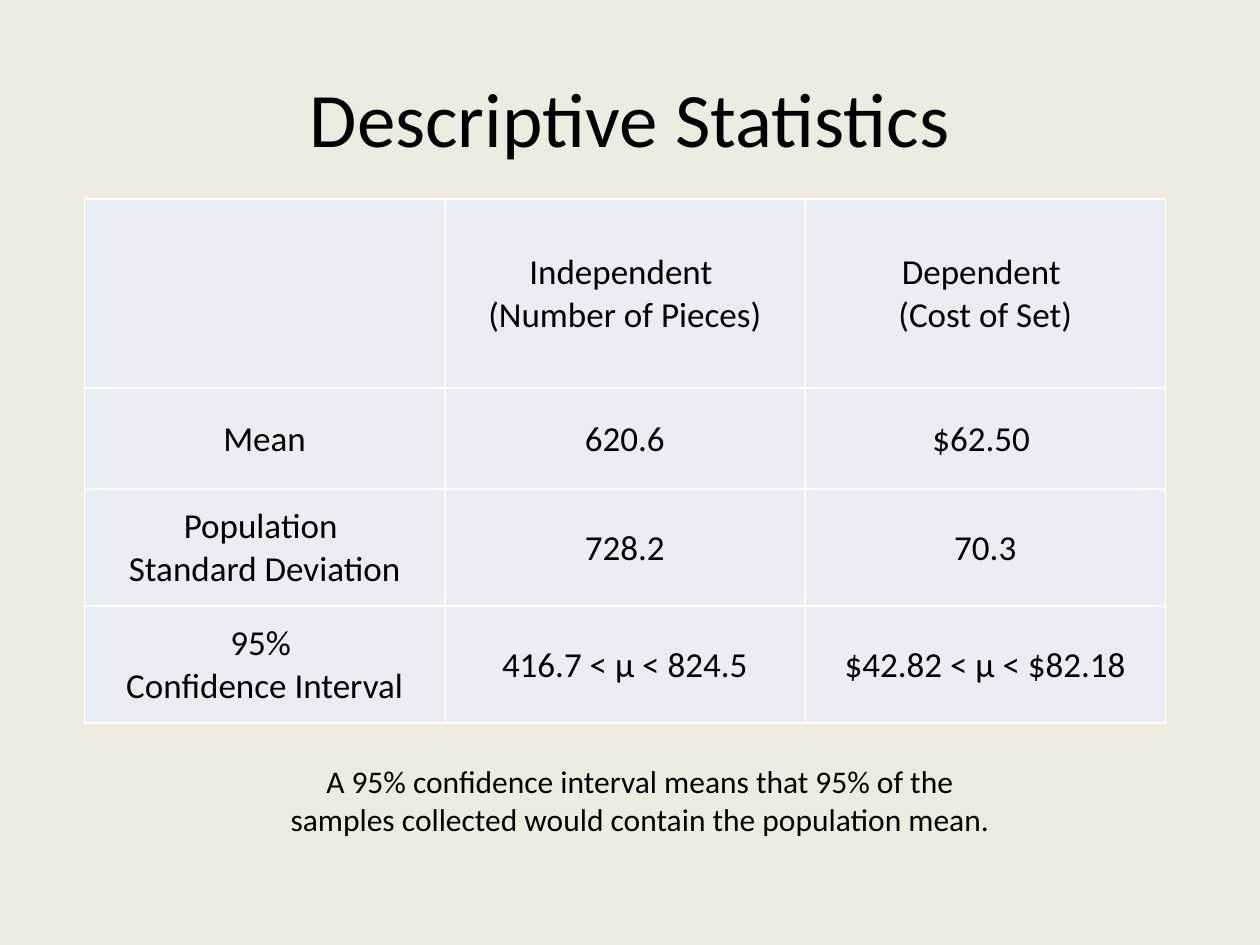
from lxml import etree
from pptx import Presentation
from pptx import util as u
from pptx.dml.color import RGBColor
from pptx.enum import text as t
from pptx.oxml import ns

COLORS = {"background": "EEECE1", "cell": "E9EDF4", "border": "FFFFFF", "text": "000000"}
FONT = "Calibri"
STATISTICS = [
    ["", "Independent \n(Number of Pieces)", "Dependent \n(Cost of Set)"],
    ["Mean", "620.6", "$62.50 "],
    ["Population \nStandard Deviation", "728.2", "70.3"],
    ["95% \nConfidence Interval", "416.7 < µ < 824.5", "$42.82 < µ < $82.18"],
]
ROW_HEIGHTS = [1.5, 0.8, 0.93, 0.93]
NOTE = ("A 95% confidence interval means that 95% of the "
        "samples collected would contain the population mean.")


def write(frame, content, size, color="text", align=t.PP_ALIGN.CENTER):
    """Put formatted text in the first paragraph of a text frame."""
    frame.word_wrap = True
    paragraph = frame.paragraphs[0]
    paragraph.text = content
    paragraph.alignment = align
    for run in paragraph.runs:
        run.font.name = FONT
        run.font.size = u.Pt(size)
        run.font.color.rgb = RGBColor.from_string(COLORS[color])


def add_borders(cell, color="border", width=1):
    """Draw a solid line on all four sides of a table cell."""
    properties = cell._tc.get_or_add_tcPr()
    for position, side in enumerate(("lnL", "lnR", "lnT", "lnB")):
        line = etree.Element(ns.qn(f"a:{side}"), w=str(u.Pt(width)))
        fill = etree.SubElement(line, ns.qn("a:solidFill"))
        etree.SubElement(fill, ns.qn("a:srgbClr"), val=COLORS[color])
        properties.insert(position, line)


def place_title(slide, left, top, width, height):
    """Fill the title placeholder and fit it to its box."""
    title = slide.shapes.title
    title.left, title.top, title.width, title.height = map(u.Inches, (left, top, width, height))
    title.text_frame.vertical_anchor = t.MSO_ANCHOR.MIDDLE
    write(title.text_frame, "Descriptive Statistics", 44)


def place_statistics(slide, left, top, width, height):
    """Add the table of statistics with equal columns."""
    box = map(u.Inches, (left, top, width, height))
    table = slide.shapes.add_table(len(STATISTICS), len(STATISTICS[0]), *box).table
    table.first_row = table.horz_banding = False
    for row, row_height in zip(table.rows, ROW_HEIGHTS):
        row.height = u.Inches(row_height)
    for row, entries in zip(table.rows, STATISTICS):
        for cell, entry in zip(row.cells, entries):
            cell.fill.solid()
            cell.fill.fore_color.rgb = RGBColor.from_string(COLORS["cell"])
            cell.vertical_anchor = t.MSO_ANCHOR.MIDDLE
            cell.margin_left = cell.margin_right = cell.margin_top = u.Inches(0.01)
            cell.margin_bottom = 0
            add_borders(cell)
            write(cell.text_frame, entry, 20)


def place_note(slide, left, top, width, height):
    """Add the explanation of the confidence interval."""
    note = slide.shapes.add_textbox(*map(u.Inches, (left, top, width, height)))
    note.text_frame.auto_size = t.MSO_AUTO_SIZE.SHAPE_TO_FIT_TEXT
    write(note.text_frame, NOTE, 18)


def main():
    """Build and save the slide."""
    deck = Presentation()
    deck.slide_width, deck.slide_height = u.Inches(10), u.Inches(7.5)
    slide = deck.slides.add_slide(deck.slide_layouts.get_by_name("Title Only"))
    slide.background.fill.solid()
    slide.background.fill.fore_color.rgb = RGBColor.from_string(COLORS["background"])
    place_title(slide, 0.5, 0.3, 9, 1.25)
    place_statistics(slide, 0.67, 1.58, 8.58, sum(ROW_HEIGHTS))
    place_note(slide, 2.08, 6, 6, 0.71)
    deck.save("out.pptx")


if __name__ == "__main__":
    main()
